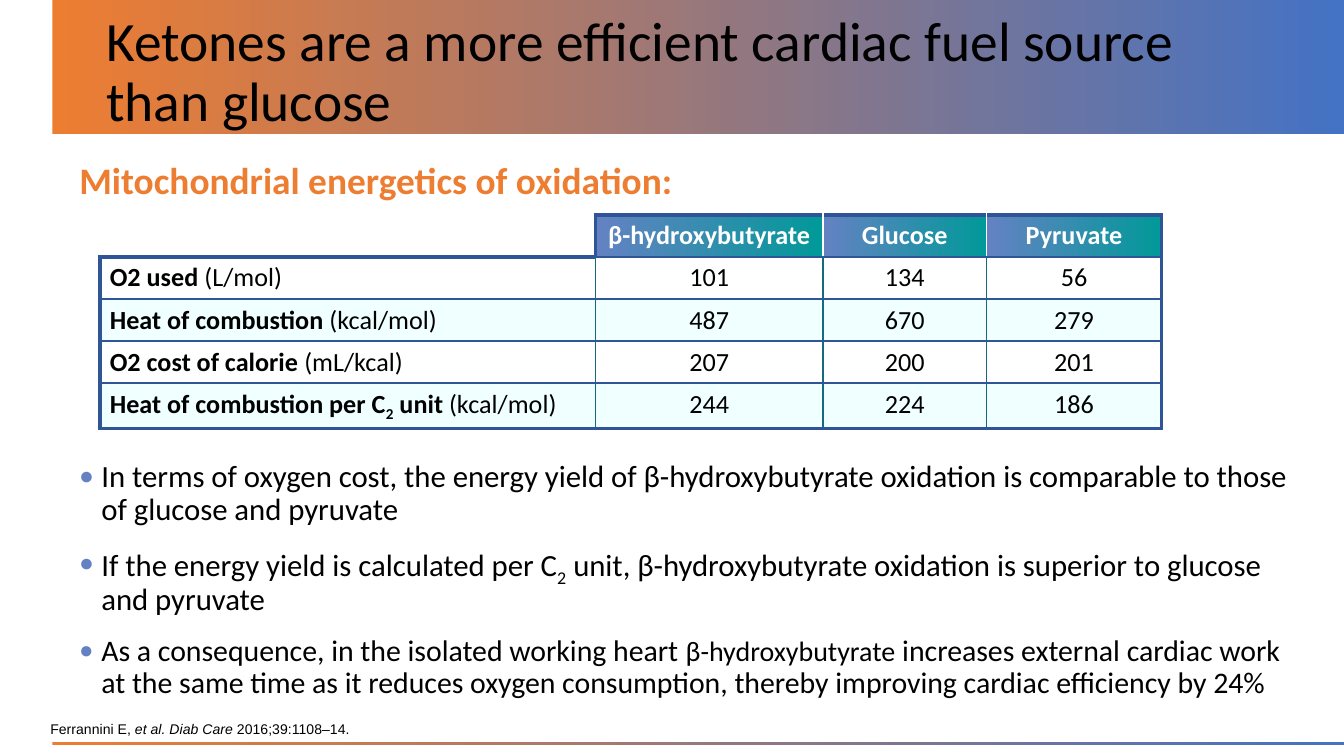
import pptx
import pptx.dml.color
import pptx.enum.shapes
import pptx.enum.text
import pptx.oxml.ns
import pptx.util
from lxml import etree

ALIGN = pptx.enum.text.PP_ALIGN
ANCHOR = pptx.enum.text.MSO_ANCHOR
qn = pptx.oxml.ns.qn

ORANGE, BLUE, NAVY, TEAL = "ED7D31", "4472C4", "2F5597", "176881"
SUBSCRIPT = {"subscript": True}
PLAIN = {"bold": False}


def color(hex_string):
    return pptx.dml.color.RGBColor.from_string(hex_string)


def add_text(paragraph, text, size=14, font="Calibri", fill="000000",
             bold=False, italic=False, subscript=False):
    run = paragraph.add_run()
    run.text = text
    run.font.size = pptx.util.Pt(size)
    run.font.name = font
    run.font.color.rgb = color(fill)
    run.font.bold = bold
    run.font.italic = italic
    if subscript:
        run.font._element.set("baseline", "-25000")


presentation = pptx.Presentation()
presentation.slide_width = pptx.util.Inches(10)
presentation.slide_height = presentation.slide_width * 9 // 16
slide = presentation.slides.add_slide(presentation.slide_layouts.get_by_name("Two Content"))
unit = presentation.slide_width / 100  # square grid, 100 columns across
gradients = []  # (fill, first colour, last colour)

# Title band and bottom rule, behind everything else
for index, (top, height) in enumerate([(0, 10), (55.2, 0.2)]):
    band = slide.shapes.add_shape(
        pptx.enum.shapes.MSO_SHAPE.RECTANGLE,
        int(3.9 * unit), int(top * unit), int(96.1 * unit), int(height * unit))
    band.shadow.inherit = False
    band.line.fill.background()
    gradients.append((band.fill, ORANGE, BLUE))
    slide.shapes._spTree.insert(2 + index, band._element)

# Place the title, heading and list placeholders
title, heading, findings = slide.placeholders
for shape, left, top, width, height in [
        (title, 6.9, 0, 86.2, 10.9),
        (heading, 4.9, 11.6, 90.2, 4),
        (findings, 4.88, 33.8, 92.2, 18.9)]:
    shape.left, shape.top = int(left * unit), int(top * unit)
    shape.width, shape.height = int(width * unit), int(height * unit)
    shape.text_frame.word_wrap = True
    shape.text_frame.auto_size = pptx.enum.text.MSO_AUTO_SIZE.NONE
    shape.text_frame.vertical_anchor = ANCHOR.MIDDLE if shape is title else ANCHOR.TOP

# Title
paragraph = title.text_frame.paragraphs[0]
paragraph.alignment = ALIGN.LEFT
paragraph.line_spacing = 0.9
add_text(paragraph, "Ketones are a more efficient cardiac fuel source than glucose", size=29.7)

# Heading
paragraph = heading.text_frame.paragraphs[0]
paragraph.line_spacing = 0.9
paragraph.space_before = pptx.util.Pt(7.5)
properties = paragraph._p.get_or_add_pPr()
properties.set("marL", "0")
properties.set("indent", "0")
etree.SubElement(properties, qn("a:buNone"))
add_text(paragraph, "Mitochondrial energetics of oxidation:", size=20, fill=ORANGE, bold=True)

# Bulleted findings
bullets = [
    [("In terms of oxygen cost, the energy yield of β-hydroxybutyrate oxidation is "
      "comparable to those of glucose and pyruvate", {"size": 16.5})],
    [("If the energy yield is calculated per C", {"size": 16.5}),
     ("2", {"size": 16.5, "subscript": True}),
     (" unit, β-hydroxybutyrate oxidation is superior to glucose and pyruvate", {"size": 16.5})],
    [("As a consequence, in the isolated working heart ", {"size": 16}),
     ("β-hydroxybutyrate", {"size": 15}),
     (" increases external cardiac work at the same time as it reduces oxygen consumption, "
      "thereby improving cardiac efficiency by 24%", {"size": 16})],
]
for index, runs in enumerate(bullets):
    frame = findings.text_frame
    paragraph = frame.add_paragraph() if index else frame.paragraphs[0]
    paragraph.line_spacing = 0.9
    paragraph.space_before = pptx.util.Pt(10)
    properties = paragraph._p.get_or_add_pPr()
    properties.set("marL", str(int(1.66 * unit)))
    properties.set("indent", str(int(-1.66 * unit)))
    bullet_color = etree.SubElement(properties, qn("a:buClr"))
    etree.SubElement(bullet_color, qn("a:srgbClr"), val="6482C3")
    etree.SubElement(properties, qn("a:buSzPct"), val="80000")
    etree.SubElement(properties, qn("a:buFont"), typeface="Arial")
    etree.SubElement(properties, qn("a:buChar"), char="●")
    for text, style in runs:
        add_text(paragraph, text, **style)

# Energetics table: each cell is a list of runs
column_names = ["β-hydroxybutyrate", "Glucose", "Pyruvate"]
measures = [
    ([("O2 used ", {}), ("(L/mol)", PLAIN)], [101, 134, 56]),
    ([("Heat of combustion", {}), (" (kcal/mol)", PLAIN)], [487, 670, 279]),
    ([("O2 cost of calorie ", {}), ("(mL/kcal)", PLAIN)], [207, 200, 201]),
    ([("Heat of combustion per C", {}), ("2", SUBSCRIPT), (" unit ", {}),
      ("(kcal/mol)", PLAIN)], [244, 224, 186]),
]
grid = [[[]] + [[(name, {"fill": "FFFFFF"})] for name in column_names]]
for label, values in measures:
    grid.append([label] + [[(str(value), PLAIN)] for value in values])
row_count, column_count = len(grid), len(grid[0])

table = slide.shapes.add_table(
    row_count, column_count, int(7.42 * unit), int(16 * unit),
    int(79 * unit), int(15.4 * unit)).table
table.first_row = table.horz_banding = False
for column, width in zip(table.columns, [36.9, 16.9, 12.2, 13]):
    column.width = int(width * unit)

for row_index, row in enumerate(grid):
    for column_index, runs in enumerate(row):
        cell = table.cell(row_index, column_index)
        cell.margin_left = cell.margin_right = int(0.75 * unit)
        cell.margin_top = cell.margin_bottom = int(0.38 * unit)
        paragraph = cell.text_frame.paragraphs[0]
        paragraph.alignment = ALIGN.CENTER if column_index else ALIGN.LEFT
        for text, style in runs:
            add_text(paragraph, text, **{"bold": True, **style})
        # Keeps the empty corner from stretching the header row
        etree.SubElement(paragraph._p, qn("a:endParaRPr"), sz="1400")

        # Fill: gradient header, faint tint on alternate rows
        properties = cell._tc.get_or_add_tcPr()
        if row_index == 0 and column_index:
            gradients.append((cell.fill, "6482C3", "019999"))
        else:
            cell.fill.solid()
            tinted = row_index and row_index % 2 == 0
            cell.fill.fore_color.rgb = color("B8FFFF" if tinted else "FFFFFF")
            if row_index:
                etree.SubElement(properties.find(".//" + qn("a:srgbClr")),
                                 qn("a:alpha"), val="20000")

        # Borders: heavy outline that steps around the empty corner
        borders = [("lnL", True, column_index), ("lnR", True, column_index + 1),
                   ("lnT", False, row_index), ("lnB", False, row_index + 1)]
        for position, (tag, vertical, edge) in enumerate(borders):
            across, last = (row_index, column_count) if vertical else (column_index, row_count)
            heavy = edge in (0, last) or (across == 0 and edge == 1)
            line = etree.Element(qn("a:" + tag), w=str(pptx.util.Pt(2.25 if heavy else 1)))
            if across == 0 and edge == 0:
                etree.SubElement(line, qn("a:noFill"))
            else:
                inner = ("FFFFFF" if row_index == 0 else TEAL) if vertical else NAVY
                solid = etree.SubElement(line, qn("a:solidFill"))
                etree.SubElement(solid, qn("a:srgbClr"), val=NAVY if heavy else inner)
            properties.insert(position, line)

# Left-to-right gradients
for fill, first, last in gradients:
    fill.gradient()
    fill.gradient_angle = 0
    for stop, stop_color in zip(fill.gradient_stops, (first, last)):
        stop.color.rgb = color(stop_color)

# Citation
citation = slide.shapes.add_textbox(0, int(53.1 * unit), int(27.1 * unit), int(3.2 * unit))
frame = citation.text_frame
frame.word_wrap = False
frame.vertical_anchor = ANCHOR.BOTTOM
frame.margin_left, frame.margin_right = int(3.74 * unit), int(unit)
frame.margin_top, frame.margin_bottom = int(0.5 * unit), int(1.4 * unit)
paragraph = frame.paragraphs[0]
paragraph.space_before = pptx.util.Pt(2)
for text, italic in [("Ferrannini E, ", False), ("et al. Diab Care ", True),
                     ("2016;39:1108–14.", False)]:
    add_text(paragraph, text, size=7.5, font="Arial", italic=italic)

presentation.save("out.pptx")
